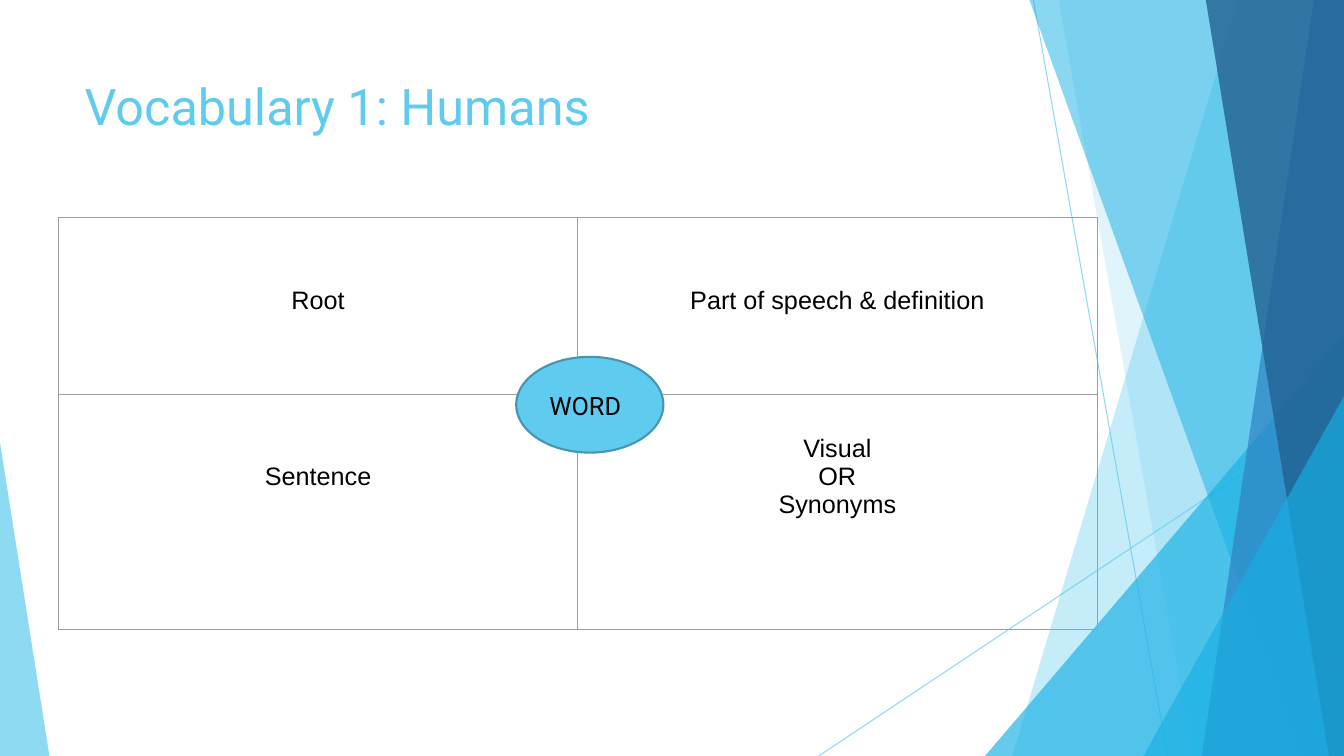
from dataclasses import dataclass

from lxml import etree
from pptx import Presentation
from pptx.dml.color import RGBColor
from pptx.enum.shapes import MSO_CONNECTOR, MSO_SHAPE
from pptx.enum.text import MSO_ANCHOR, PP_ALIGN
from pptx.oxml.ns import qn
from pptx.util import Inches, Pt

STRAIGHT = MSO_CONNECTOR.STRAIGHT
ELLIPSE = MSO_SHAPE.OVAL
TRIANGLE = MSO_SHAPE.ISOSCELES_TRIANGLE
TOP, MIDDLE = MSO_ANCHOR.TOP, MSO_ANCHOR.MIDDLE
LEFT, CENTER = PP_ALIGN.LEFT, PP_ALIGN.CENTER

WIDTH, HEIGHT = 13.33, 7.5


@dataclass(frozen=True)
class Theme:
    sky: str = "5FCBEF"
    cyan: str = "17B0E4"
    blue: str = "2E83C3"
    navy: str = "226292"
    ellipse_line: str = "4696B1"
    border: str = "9E9E9E"
    text: str = "000000"
    heading_font: str = "Roboto"
    table_font: str = "Arial"
    title_size: int = 36
    body_size: int = 18
    thin_line: float = 0.75
    ellipse_width: float = 1.5


def apply_format(target, values):
    for name, value in values.items():
        setattr(target, name, value)


def set_opacity(fill_parent, percent):
    """Make the solid fill directly below the element partly transparent."""
    color = fill_parent.find(qn("a:solidFill"))[0]
    etree.SubElement(color, qn("a:alpha"), val=str(percent * 1000))


class SlideBuilder:
    def __init__(self, slide, theme):
        self.slide = slide
        self.shapes = slide.shapes
        self.theme = theme

    def line(self, start, end, opacity):
        connector = self.shapes.add_connector(
            STRAIGHT, *(Inches(value) for value in (*start, *end)))
        connector.line.color.rgb = RGBColor.from_string(self.theme.sky)
        connector.line.width = Pt(self.theme.thin_line)
        properties = connector.element.spPr
        set_opacity(properties.find(qn("a:ln")), opacity)
        etree.SubElement(properties, qn("a:effectLst"))

    def paint(self, shape, color, opacity=100):
        shape.shadow.inherit = False
        shape.fill.solid()
        shape.fill.fore_color.rgb = RGBColor.from_string(color)
        shape.line.fill.background()
        if opacity < 100:
            set_opacity(shape.element.spPr, opacity)

    def band(self, top_left, bottom_left, color, opacity):
        """Fill from a slanted left side to the right edge of the slide."""
        corners = [(top_left, 0), (WIDTH, 0), (WIDTH, HEIGHT), (bottom_left, HEIGHT)]
        points = [(Inches(x), Inches(y)) for x, y in corners]
        builder = self.shapes.build_freeform(*points[0])
        builder.add_line_segments(points[1:], close=True)
        self.paint(builder.convert_to_shape(), color, opacity)

    def corner(self, left, top, width, apex, color, opacity):
        """Place a right triangle on the bottom edge, apex at 0 (left) or 1 (right)."""
        shape = self.shapes.add_shape(TRIANGLE, Inches(left), Inches(top),
                                      Inches(width), Inches(HEIGHT - top))
        shape.adjustments[0] = apex
        self.paint(shape, color, opacity)

    def ellipse(self, box):
        shape = self.shapes.add_shape(ELLIPSE, *(Inches(value) for value in box))
        self.paint(shape, self.theme.sky)
        shape.line.color.rgb = RGBColor.from_string(self.theme.ellipse_line)
        shape.line.width = Pt(self.theme.ellipse_width)

    def fill_text(self, frame, lines, font, size, color, alignment=LEFT):
        for index, text in enumerate(lines):
            paragraph = frame.add_paragraph() if index else frame.paragraphs[0]
            paragraph.alignment = alignment
            run = paragraph.add_run()
            run.text = text
            apply_format(run.font, {"name": font, "size": Pt(size)})
            run.font.color.rgb = RGBColor.from_string(color)

    def text(self, box, words, size, color):
        frame = self.shapes.add_textbox(*(Inches(value) for value in box)).text_frame
        apply_format(frame, {"word_wrap": True, "vertical_anchor": MIDDLE})
        self.fill_text(frame, [words], self.theme.heading_font, size, color)

    def cell_borders(self, cell):
        properties = cell._tc.get_or_add_tcPr()
        for side in ("lnL", "lnR", "lnT", "lnB"):
            border = etree.SubElement(properties, qn(f"a:{side}"),
                                      w=str(Pt(self.theme.thin_line)))
            fill = etree.SubElement(border, qn("a:solidFill"))
            etree.SubElement(fill, qn("a:srgbClr"), val=self.theme.border)

    def table(self, left, top, column_width, row_heights, rows):
        """Draw a grid whose cells each give a top margin and their lines."""
        columns = len(rows[0])
        table = self.shapes.add_table(
            len(rows), columns, Inches(left), Inches(top),
            Inches(column_width * columns), Inches(sum(row_heights))).table
        apply_format(table, {"first_row": False, "horz_banding": False})
        for column in table.columns:
            column.width = Inches(column_width)
        for row_index, (height, row) in enumerate(zip(row_heights, rows)):
            table.rows[row_index].height = Inches(height)
            for column_index, (margin_top, lines) in enumerate(row):
                cell = table.cell(row_index, column_index)
                self.cell_borders(cell)
                cell.fill.background()
                apply_format(cell, {
                    "margin_left": Inches(0.1), "margin_right": Inches(0.1),
                    "margin_top": Inches(margin_top), "margin_bottom": Inches(0.1),
                    "vertical_anchor": TOP})
                self.fill_text(cell.text_frame, lines, self.theme.table_font,
                               self.theme.body_size, self.theme.text, CENTER)


def main():
    presentation = Presentation()
    presentation.slide_width = Inches(WIDTH)
    presentation.slide_height = Inches(HEIGHT)
    theme = Theme()
    slide = SlideBuilder(
        presentation.slides.add_slide(presentation.slide_layouts[6]), theme)

    slide.line((10.25, 0), (11.58, HEIGHT), 70)
    slide.line((WIDTH, 4.03), (8.12, HEIGHT), 70)
    slide.band(12.28, 10.04, theme.sky, 36)
    slide.band(10.5, 11.83, theme.sky, 20)
    slide.corner(9.77, 3.33, 3.56, 1, theme.cyan, 66)
    slide.band(10.21, 12.91, theme.cyan, 50)
    slide.band(13.03, 11.92, theme.blue, 70)
    slide.band(11.96, 13.18, theme.navy, 80)
    slide.corner(11.34, 3.93, 1.99, 1, theme.cyan, 66)
    slide.corner(0, 4.39, 0.49, 0, theme.sky, 70)

    slide.text((0.74, 0.67, 9.4, 0.76), "Vocabulary 1: Humans",
               theme.title_size, theme.sky)
    slide.table(0.58, 2.16, 5.15, (1.75, 2.33), [
        [(0.68, ["Root"]), (0.68, ["Part of speech & definition"])],
        [(0.68, ["Sentence"]), (0.4, ["Visual", "OR", "Synonyms"])],
    ])
    slide.ellipse((5.12, 3.54, 1.46, 0.95))
    slide.text((5.35, 3.82, 0.97, 0.4), "WORD", theme.body_size, theme.text)

    presentation.save("out.pptx")


if __name__ == "__main__":
    main()
